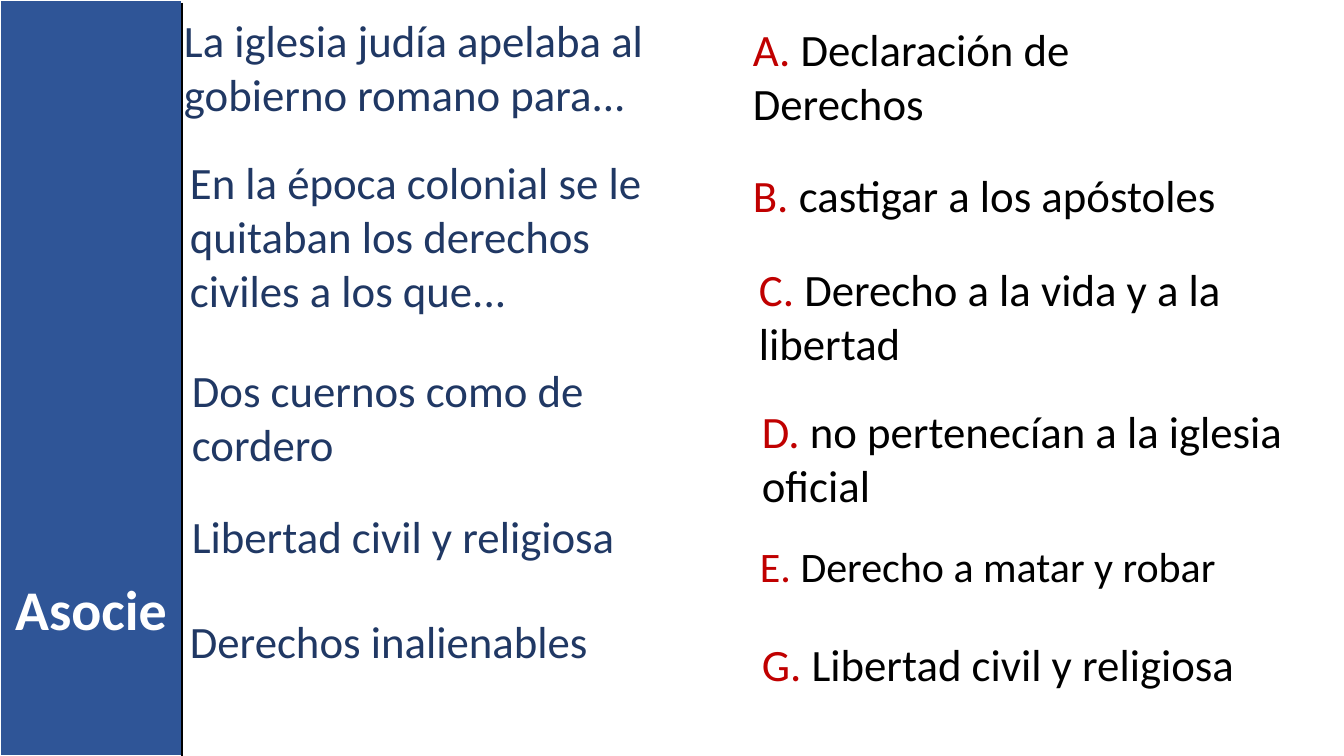
import pptx
import pptx.dml.color
import pptx.enum.shapes
import pptx.enum.text
import pptx.oxml.ns
import pptx.util
import lxml.etree
from dataclasses import dataclass

SCALE = 914400 / 100.8  # EMU in one px
WIDE, HIGH = 1344, 756
BAND = 182


@dataclass(frozen=True)
class Theme:
    font: str = "Calibri"
    band: str = "2F5597"
    navy: str = "203864"
    red: str = "C00000"
    black: str = "000000"
    white: str = "FFFFFF"
    title: int = 40
    body: int = 32
    small: int = 30


THEME = Theme()

# left, top, width, height, text
CLUES = [
    (174, 8, 578, 119, "La iglesia judía apelaba al gobierno romano para..."),
    (180, 150, 515, 173, "En la época colonial se le quitaban los derechos "
                         "civiles a los que..."),
    (182, 358, 514, 119, "Dos cuernos como de cordero"),
    (182, 504, 539, 65, "Libertad civil y religiosa"),
    (180, 609, 481, 65, "Derechos inalienables"),
]

# left, top, width, height, letter, text, size
CHOICES = [
    (743, 17, 508, 119, "A. ", "Declaración de Derechos", THEME.body),
    (743, 163, 533, 65, "B. ", "castigar a los apóstoles", THEME.body),
    (749, 257, 534, 119, "C. ", "Derecho a la vida y a la libertad", THEME.body),
    (752, 399, 557, 119, "D. ", "no pertenecían a la iglesia oficial", THEME.body),
    (750, 536, 533, 61, "E. ", "Derecho a matar y robar", THEME.small),
    (752, 632, 551, 65, "G. ", "Libertad civil y religiosa", THEME.body),
]


def px(num):
    return pptx.util.Emu(round(num * SCALE))


def tint(code):
    return pptx.dml.color.RGBColor.from_string(code)


def style(run, color, size, bold=False):
    run.font.name = THEME.font
    run.font.size = pptx.util.Pt(size)
    run.font.bold = bold
    run.font.color.rgb = tint(color)


def add_band(slide):
    kind = pptx.enum.shapes.MSO_SHAPE.RECTANGLE
    band = slide.shapes.add_shape(kind, 0, 0, px(BAND), px(HIGH))
    band.shadow.inherit = False
    band.fill.solid()
    band.fill.fore_color.rgb = tint(THEME.band)
    band.line.color.rgb = tint(THEME.white)
    band.line.width = pptx.util.Pt(1.5)


def add_text(slide, area, parts, size):
    box = slide.shapes.add_textbox(*map(px, area))
    frame = box.text_frame
    frame.word_wrap = True
    frame.auto_size = pptx.enum.text.MSO_AUTO_SIZE.SHAPE_TO_FIT_TEXT
    for text, color in parts:
        run = frame.paragraphs[0].add_run()
        run.text = text
        style(run, color, size)


def set_title(slide, text):
    title = slide.shapes.title
    title.left, title.top = px(0), px(569)
    title.width, title.height = px(BAND), px(77)
    frame = title.text_frame
    frame.text = text
    frame.word_wrap = True
    frame.auto_size = pptx.enum.text.MSO_AUTO_SIZE.NONE
    frame.vertical_anchor = pptx.enum.text.MSO_ANCHOR.TOP
    para = frame.paragraphs[0]
    para.alignment = pptx.enum.text.PP_ALIGN.CENTER
    style(para.runs[0], THEME.white, THEME.title, True)
    # Bring the title in front of the band
    slide.shapes._spTree.append(title._element)


def add_edge(slide):
    kind = pptx.enum.shapes.MSO_CONNECTOR.STRAIGHT
    edge = slide.shapes.add_connector(kind, px(BAND), px(3), px(BAND), px(HIGH))
    edge.line.color.rgb = tint(THEME.black)
    edge.line.width = pptx.util.Pt(1)
    lxml.etree.SubElement(edge._element.spPr, pptx.oxml.ns.qn("a:effectLst"))


def main():
    deck = pptx.Presentation()
    deck.slide_width, deck.slide_height = px(WIDE), px(HIGH)
    slide = deck.slides.add_slide(deck.slide_layouts[5])

    # Side band
    add_band(slide)

    # Clues on the left
    for *area, text in CLUES:
        add_text(slide, area, [(text, THEME.navy)], THEME.body)

    # Choices on the right
    for *area, letter, text, size in CHOICES:
        parts = [(letter, THEME.red), (text, THEME.black)]
        add_text(slide, area, parts, size)

    # Title and band edge
    set_title(slide, "Asocie")
    add_edge(slide)

    deck.save("out.pptx")


if __name__ == "__main__":
    main()
